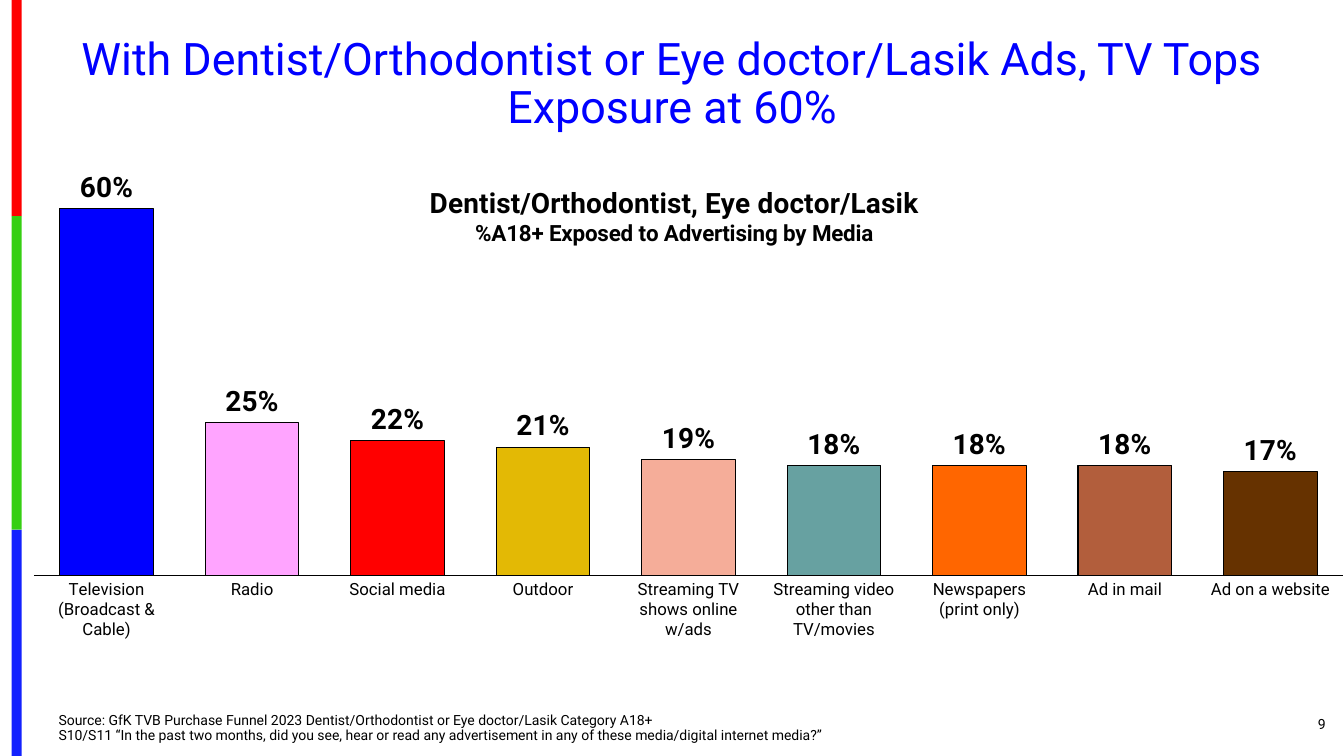
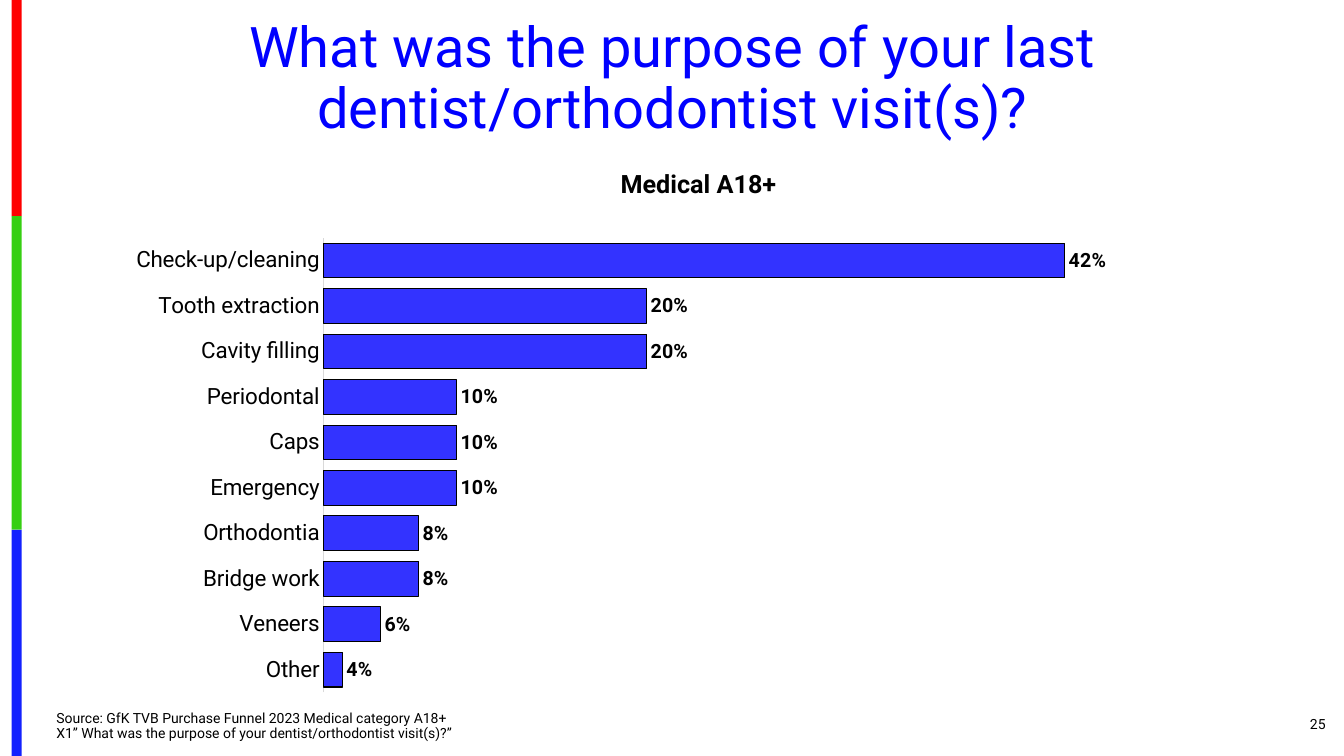
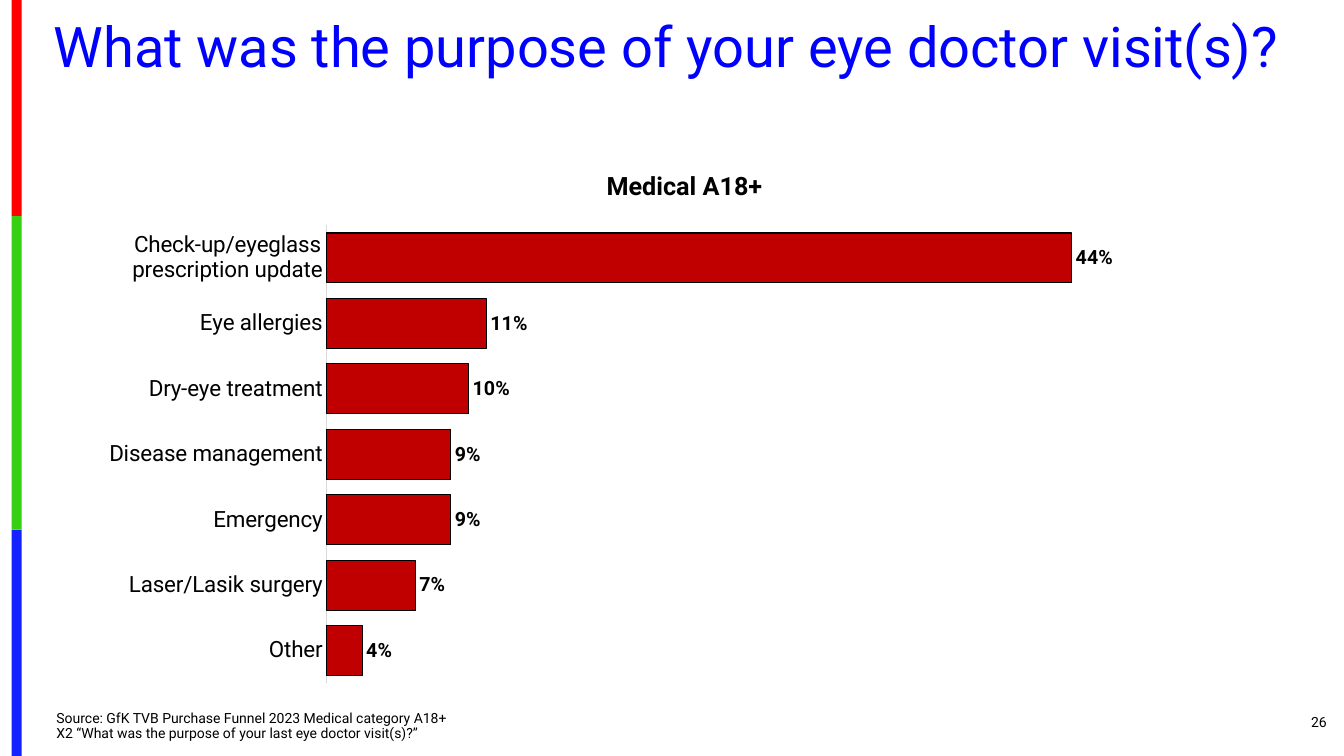
from dataclasses import dataclass
from typing import Optional

from pptx import Presentation, oxml
from pptx import util as u
from pptx.chart import data as cd
from pptx.dml.color import RGBColor
from pptx.enum import chart as ec, shapes, text
from pptx.oxml import ns

FONT = "Roboto"
COLORS = {
    "title": "0000FF", "text": "000000", "axis": "D9D9D9",
    "band_red": "FE0000", "band_green": "36CF12", "band_blue": "1322FE",
    "purpose": "3333FF", "eye": "C00000",
    "tv": "0000FF", "radio": "FFA4FF", "social": "FF0000",
    "outdoor": "E3B905", "streaming_tv": "F5AD99", "streaming_video": "67A1A1",
    "newspapers": "FF6600", "mail": "B25E3C", "website": "663200",
}


@dataclass(frozen=True)
class Box:
    """A rectangle in points."""
    x: float
    y: float
    w: float
    h: float

    def emu(self) -> tuple:
        return tuple(u.Pt(v) for v in (self.x, self.y, self.w, self.h))


@dataclass(frozen=True)
class Band:
    color: str
    top: float
    bottom: float


@dataclass(frozen=True)
class Bar:
    label: str
    value: float
    color: str


@dataclass(frozen=True)
class ChartStyle:
    kind: ec.XL_CHART_TYPE
    gap: int
    overlap: int
    axis_size: int
    label_size: int
    axis_color: str
    plot: Box  # fractions of the chart


@dataclass(frozen=True)
class ChartSlide:
    title: str
    title_size: int
    title_box: Box
    style: ChartStyle
    chart_box: Box
    axis_range: tuple[float, float]
    bars: list[Bar]
    source: tuple[str, str]
    source_box: Box
    number: str
    number_box: Box
    heading_box: Optional[Box] = None
    chart_title: tuple = ()


BANDS = [Band("band_red", 0, 154.4), Band("band_green", 154.4, 378.4),
         Band("band_blue", 378.4, 540)]
COLUMNS = ChartStyle(ec.XL_CHART_TYPE.COLUMN_CLUSTERED, 55, -30, 12, 20,
                     "text", Box(0, 0.08, 1, 0.74))
ROWS = ChartStyle(ec.XL_CHART_TYPE.BAR_CLUSTERED, 31, 0, 16, 14,
                  "axis", Box(0.18, 0.11, 0.66, 0.84))


def one_color(color: str, rows: list[tuple[str, float]]) -> list[Bar]:
    return [Bar(label, value, color) for label, value in rows]


SLIDES = [
    ChartSlide(
        title="With Dentist/Orthodontist or Eye doctor/Lasik Ads, "
              "TV Tops Exposure at 60%",
        title_size=32, title_box=Box(33.1, 22.3, 894.2, 77),
        style=COLUMNS, chart_box=Box(23.8, 72.7, 936, 412.6),
        axis_range=(0, 0.7),
        bars=[
            Bar("Television\n(Broadcast & Cable)", 0.6, "tv"),
            Bar("Radio", 0.25, "radio"),
            Bar("Social media", 0.22, "social"),
            Bar("Outdoor", 0.21, "outdoor"),
            Bar("Streaming TV shows online w/ads", 0.19, "streaming_tv"),
            Bar("Streaming video\nother than\nTV/movies", 0.18,
                "streaming_video"),
            Bar("Newspapers\n(print only)", 0.18, "newspapers"),
            Bar("Ad in mail", 0.18, "mail"),
            Bar("Ad on a website", 0.17, "website"),
        ],
        chart_title=(("Dentist/Orthodontist, Eye doctor/Lasik", 20),
                     ("%A18+ Exposed to Advertising by Media", 16)),
        source=("Source: GfK TVB Purchase Funnel 2023 Dentist/Orthodontist "
                "or Eye doctor/Lasik Category A18+",
                "S10/S11 “In the past two months, did you see, hear or read "
                "any advertisement in any of these media/digital internet "
                "media?”"),
        source_box=Box(34.6, 506.2, 765.4, 28.8),
        number="9", number_box=Box(876.2, 502.6, 77.8, 28.8)),
    ChartSlide(
        title="What was the purpose of your last "
              "dentist/orthodontist visit(s)?",
        title_size=40, title_box=Box(33.1, 10.1, 894.2, 94.3),
        style=ROWS, chart_box=Box(75.6, 127.4, 864, 386.6),
        axis_range=(0.03, 0.45),
        bars=one_color("purpose", [
            ("Other", 0.04), ("Veneers", 0.06), ("Bridge work", 0.08),
            ("Orthodontia", 0.08), ("Emergency", 0.1), ("Caps", 0.1),
            ("Periodontal", 0.1), ("Cavity filling", 0.2),
            ("Tooth extraction", 0.2), ("Check-up/cleaning", 0.42)]),
        heading_box=Box(422.6, 116.6, 152.6, 28.8),
        source=("Source: GfK TVB Purchase Funnel 2023 Medical category A18+",
                "X1” What was the purpose of your dentist/orthodontist "
                "visit(s)?”"),
        source_box=Box(33.1, 504.7, 680.4, 28.8),
        number="25", number_box=Box(876.2, 502.6, 77.8, 28.8)),
    ChartSlide(
        title="What was the purpose of your eye doctor visit(s)?",
        title_size=40, title_box=Box(23.8, 10.1, 903.6, 56.9),
        style=ROWS, chart_box=Box(77.8, 118.1, 864, 389.5),
        axis_range=(0.02, 0.47),
        bars=one_color("eye", [
            ("Other", 0.04), ("Laser/Lasik surgery", 0.07),
            ("Emergency", 0.09), ("Disease management", 0.09),
            ("Dry-eye treatment", 0.1), ("Eye allergies", 0.11),
            ("Check-up/eyeglass prescription update", 0.44)]),
        heading_box=Box(412.6, 118.1, 152.6, 28.8),
        source=("Source: GfK TVB Purchase Funnel 2023 Medical category A18+",
                "X2 “What was the purpose of your last eye doctor visit(s)?”"),
        source_box=Box(33.1, 504.7, 680.4, 28.8),
        number="26", number_box=Box(877, 501.1, 77.8, 28.8)),
]


def rgb(name: str) -> RGBColor:
    return RGBColor.from_string(COLORS[name])


# Text
def set_font(font, size: float, color: str = "text",
             bold: bool = False) -> None:
    font.name, font.size, font.bold = FONT, u.Pt(size), bold
    font.color.rgb = rgb(color)


def add_run(p, words: str, size: float, color: str = "text",
            bold: bool = False) -> None:
    r = p.add_run()
    r.text = words
    set_font(r.font, size, color, bold)


def frame(sp, box: Box, anchor, align):
    """Place a text shape and return its first paragraph."""
    sp.left, sp.top, sp.width, sp.height = box.emu()
    tf = sp.text_frame
    tf.word_wrap = True
    tf.auto_size = text.MSO_AUTO_SIZE.NONE
    tf.vertical_anchor = anchor
    p = tf.paragraphs[0]
    p.alignment = align
    return p


def add_label(s, box: Box, words: str, size: float, anchor, align,
              bold: bool = False) -> None:
    p = frame(s.shapes.add_textbox(*box.emu()), box, anchor, align)
    add_run(p, words, size, bold=bold)


def fill_title(s, d: ChartSlide) -> None:
    p = frame(s.shapes.title, d.title_box, text.MSO_ANCHOR.TOP,
              text.PP_ALIGN.CENTER)
    p.line_spacing = 0.9
    add_run(p, d.title, d.title_size, "title")


def fill_source(s, d: ChartSlide) -> None:
    p = frame(s.placeholders[1], d.source_box, text.MSO_ANCHOR.BOTTOM,
              text.PP_ALIGN.LEFT)
    pPr = p._p.get_or_add_pPr()
    pPr.set("marL", "0")
    pPr.set("indent", "0")
    pPr.append(oxml.parse_xml(f"<a:buNone {ns.nsdecls('a')}/>"))
    p.line_spacing = 0.9
    p.space_before = u.Pt(0)
    first, second = d.source
    add_run(p, first, 10)
    p.add_line_break()
    add_run(p, second, 10)


# Charts
def set_layout(parent, index: int, inner: bool, **fractions: float) -> None:
    """Give a plot area or chart title a manual layout."""
    for old in parent.findall(ns.qn("c:layout")):
        parent.remove(old)
    target = '<c:layoutTarget val="inner"/>' if inner else ""
    modes = "".join(f'<c:{k}Mode val="edge"/>' for k in "xy")
    sizes = "".join(f'<c:{k} val="{v}"/>' for k, v in fractions.items())
    parent.insert(index, oxml.parse_xml(
        f"<c:layout {ns.nsdecls('c')}><c:manualLayout>{target}{modes}{sizes}"
        "</c:manualLayout></c:layout>"))


def outline(fmt, color: str) -> None:
    fmt.line.color.rgb = rgb(color)
    fmt.line.width = u.Pt(0.75)


def paint(fmt, color: str) -> None:
    fmt.fill.solid()
    fmt.fill.fore_color.rgb = rgb(color)
    outline(fmt, "text")


def add_bars(s, d: ChartSlide) -> None:
    style = d.style
    data = cd.CategoryChartData(number_format="0%")
    data.categories = [bar.label for bar in d.bars]
    data.add_series("Series 1", [bar.value for bar in d.bars])
    chart = s.shapes.add_chart(style.kind, *d.chart_box.emu(), data).chart
    chart.has_legend = False
    set_font(chart.font, 10)

    # Transparent background
    root = chart.element
    root.find(ns.qn("c:chart")).addnext(oxml.parse_xml(
        f"<c:spPr {ns.nsdecls('c', 'a')}><a:noFill/>"
        "<a:ln><a:noFill/></a:ln></c:spPr>"))
    box = style.plot
    set_layout(root.find(".//" + ns.qn("c:plotArea")), 0, True,
               x=box.x, y=box.y, w=box.w, h=box.h)

    # Title
    chart.has_title = bool(d.chart_title)
    if d.chart_title:
        tf = chart.chart_title.text_frame
        for i, (words, size) in enumerate(d.chart_title):
            p = tf.add_paragraph() if i else tf.paragraphs[0]
            p.alignment = text.PP_ALIGN.CENTER
            add_run(p, words, size, bold=True)
        set_layout(root.find(".//" + ns.qn("c:title")), 1, False,
                   x=0.3, y=0.14)

    # Axes
    cat, val = chart.category_axis, chart.value_axis
    cat.major_tick_mark = cat.minor_tick_mark = ec.XL_TICK_MARK.NONE
    set_font(cat.tick_labels.font, style.axis_size)
    outline(cat.format, style.axis_color)
    val.visible = False
    val.has_major_gridlines = False
    val.minimum_scale, val.maximum_scale = d.axis_range

    # Bars and values
    plot = chart.plots[0]
    plot.gap_width, plot.overlap = style.gap, style.overlap
    plot.vary_by_categories = False
    series = plot.series[0]
    paint(series.format, d.bars[0].color)
    for i, bar in enumerate(d.bars):
        if bar.color != d.bars[0].color:
            paint(series.points[i].format, bar.color)
    labels = series.data_labels
    labels.show_value = True
    labels.number_format, labels.number_format_is_linked = "0%", False
    labels.position = ec.XL_LABEL_POSITION.OUTSIDE_END
    set_font(labels.font, style.label_size, bold=True)


# Shared side bands, moved to the back of the master
def add_bands(prs, s) -> None:
    tree = prs.slide_master.shapes.element
    for i, band in enumerate(BANDS):
        box = Box(8.3, band.top, 7.2, band.bottom - band.top)
        sp = s.shapes.add_shape(shapes.MSO_SHAPE.RECTANGLE, *box.emu())
        sp.shadow.inherit = False
        sp.fill.solid()
        sp.fill.fore_color.rgb = rgb(band.color)
        sp.line.fill.background()
        sp.element.nvSpPr.cNvPr.set("id", str(20 + i))
        tree.insert(2 + i, sp.element)


def add_slide(prs, d: ChartSlide):
    s = prs.slides.add_slide(prs.slide_layouts[1])
    fill_title(s, d)
    add_bars(s, d)
    add_label(s, d.number_box, d.number, 10, text.MSO_ANCHOR.MIDDLE,
              text.PP_ALIGN.RIGHT)
    if d.heading_box:
        add_label(s, d.heading_box, "Medical A18+", 18, text.MSO_ANCHOR.TOP,
                  text.PP_ALIGN.CENTER, bold=True)
    fill_source(s, d)
    return s


def main() -> None:
    prs = Presentation()
    prs.slide_width, prs.slide_height = u.Pt(960), u.Pt(540)
    slides = [add_slide(prs, d) for d in SLIDES]
    add_bands(prs, slides[0])
    prs.save("out.pptx")


if __name__ == "__main__":
    main()
